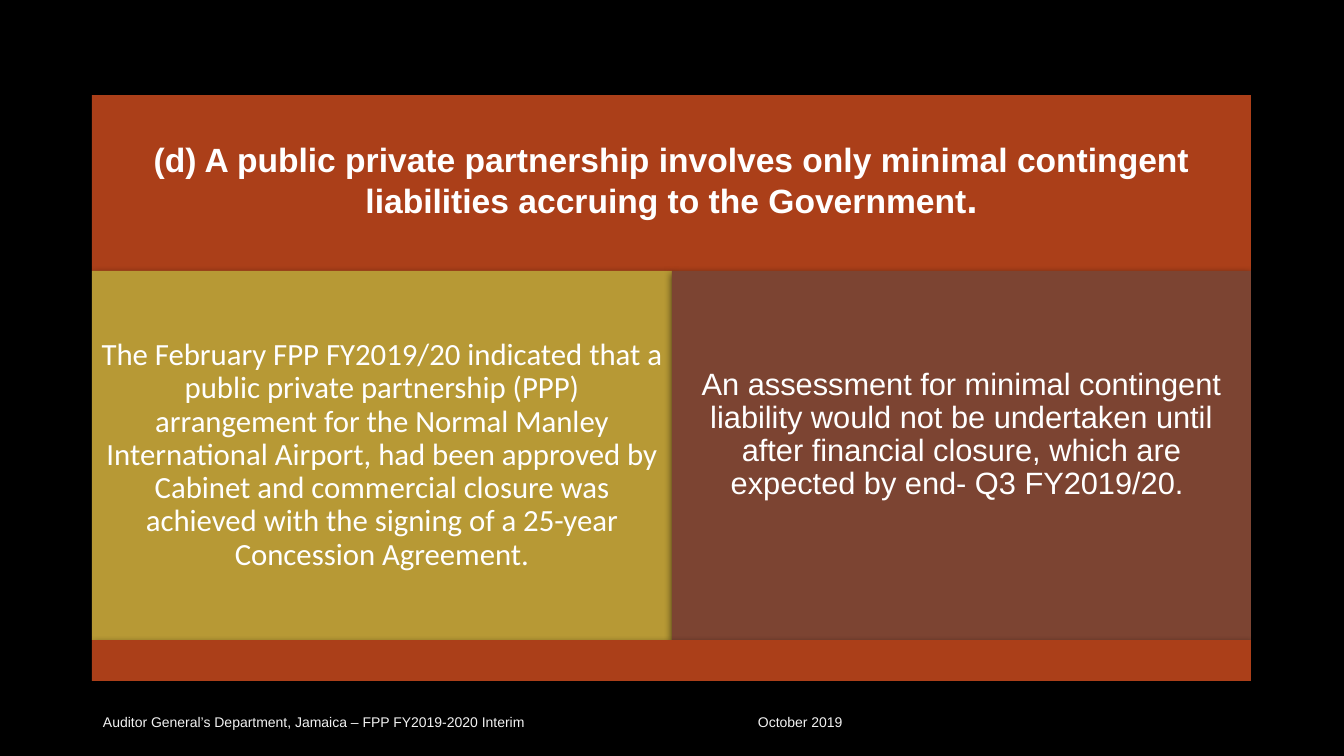
import dataclasses

import lxml.etree
import pptx
import pptx.dml.color
import pptx.enum.shapes
import pptx.enum.text
import pptx.oxml
import pptx.oxml.ns
import pptx.util

EMU_PER_PX = 12192000 / 1344
ORANGE, GOLD, BROWN = "AB3F19", "B79935", "7C4432"
WHITE, PALE_GREY, BLACK = "FFFFFF", "F2F2F2", "000000"


@dataclasses.dataclass(frozen=True)
class Box:
    left: int
    top: int
    width: int
    height: int


@dataclasses.dataclass(frozen=True)
class Panel:
    box: Box
    fill: str
    text: str = ""
    font: str = "Arial"
    bottom_inset: int = 9


HEADER = Box(92, 95, 1159, 176)
PANELS = [
    Panel(
        Box(92, 271, 580, 369), GOLD,
        "The February FPP FY2019/20 indicated that a public private partnership (PPP) "
        "arrangement for the Normal Manley International Airport, had been approved by "
        "Cabinet and commercial closure was achieved with the signing of a 25-year "
        "Concession Agreement.",
        font="Calibri",
    ),
    Panel(
        Box(672, 271, 579, 369), BROWN,
        "An assessment for minimal contingent liability would not be undertaken until "
        "after financial closure, which are expected by end- Q3 FY2019/20. ",
        bottom_inset=50,
    ),
    Panel(Box(92, 640, 1159, 41), ORANGE),
]
FOOTER = Box(93, 702, 942, 39)
DATE_TAB = 655


def px(length: int) -> pptx.util.Emu:
    return pptx.util.Emu(round(length * EMU_PER_PX))


def colour(value: str) -> pptx.dml.color.RGBColor:
    return pptx.dml.color.RGBColor.from_string(value)


def place(shape, box: Box) -> None:
    shape.left, shape.top = px(box.left), px(box.top)
    shape.width, shape.height = px(box.width), px(box.height)


def paint(shape, fill: str) -> None:
    """Give a shape a plain fill, no outline and a soft shadow below."""
    shape.fill.solid()
    shape.fill.fore_color.rgb = colour(fill)
    shape.line.fill.background()
    properties = shape.fill._xPr
    for effects in properties.findall(pptx.oxml.ns.qn("a:effectLst")):
        properties.remove(effects)
    properties.append(pptx.oxml.parse_xml(
        f'<a:effectLst {pptx.oxml.ns.nsdecls("a")}>'
        '<a:outerShdw blurRad="63500" dist="25400" dir="5400000" rotWithShape="0">'
        '<a:srgbClr val="000000"><a:alpha val="60000"/></a:srgbClr>'
        '</a:outerShdw></a:effectLst>'
    ))


def set_frame(shape, inset: int, bottom_inset: int) -> None:
    frame = shape.text_frame
    frame.word_wrap = True
    frame.auto_size = pptx.enum.text.MSO_AUTO_SIZE.NONE
    frame.vertical_anchor = pptx.enum.text.MSO_ANCHOR.MIDDLE
    frame.margin_left = frame.margin_right = frame.margin_top = px(inset)
    frame.margin_bottom = px(bottom_inset)


def add_text(paragraph, text: str, *, size: int, font: str = "Arial",
             color: str = WHITE, bold: bool = False) -> None:
    run = paragraph.add_run()
    run.text = text
    run.font.size = pptx.util.Pt(size)
    run.font.name = font
    run.font.bold = bold
    run.font.color.rgb = colour(color)


def centre(paragraph) -> None:
    paragraph.alignment = pptx.enum.text.PP_ALIGN.CENTER
    paragraph.line_spacing = 0.9


def add_header(slide) -> None:
    title = slide.shapes.title
    place(title, HEADER)
    paint(title, ORANGE)
    set_frame(title, 10, 10)
    paragraph = title.text_frame.paragraphs[0]
    centre(paragraph)
    add_text(
        paragraph,
        "(d) A public private partnership involves only minimal contingent "
        "liabilities accruing to the Government",
        size=24, bold=True,
    )
    add_text(paragraph, ".", size=28, bold=True)


def add_panel(slide, panel: Panel) -> None:
    shape = slide.shapes.add_shape(pptx.enum.shapes.MSO_SHAPE.RECTANGLE, 0, 0, 0, 0)
    place(shape, panel.box)
    paint(shape, panel.fill)
    if panel.text:
        set_frame(shape, 9, panel.bottom_inset)
        paragraph = shape.text_frame.paragraphs[0]
        centre(paragraph)
        add_text(paragraph, panel.text, size=22, font=panel.font)


def add_footer(slide) -> None:
    shape = slide.shapes.add_textbox(0, 0, 0, 0)
    place(shape, FOOTER)
    set_frame(shape, 10, 10)
    paragraph = shape.text_frame.paragraphs[0]
    # One tab stop sets the date apart from the department
    properties = paragraph._p.get_or_add_pPr()
    tabs = lxml.etree.SubElement(properties, pptx.oxml.ns.qn("a:tabLst"))
    lxml.etree.SubElement(tabs, pptx.oxml.ns.qn("a:tab"), pos=str(px(DATE_TAB)), algn="l")
    add_text(
        paragraph,
        "Auditor General’s Department, Jamaica – FPP FY2019-2020 Interim\tOctober 2019",
        size=10, color=PALE_GREY,
    )


def main() -> None:
    presentation = pptx.Presentation()
    presentation.slide_width, presentation.slide_height = px(1344), px(756)
    slide = presentation.slides.add_slide(presentation.slide_layouts[5])
    slide.background.fill.solid()
    slide.background.fill.fore_color.rgb = colour(BLACK)

    add_header(slide)
    for panel in PANELS:
        add_panel(slide, panel)
    add_footer(slide)
    presentation.save("out.pptx")


if __name__ == "__main__":
    main()
